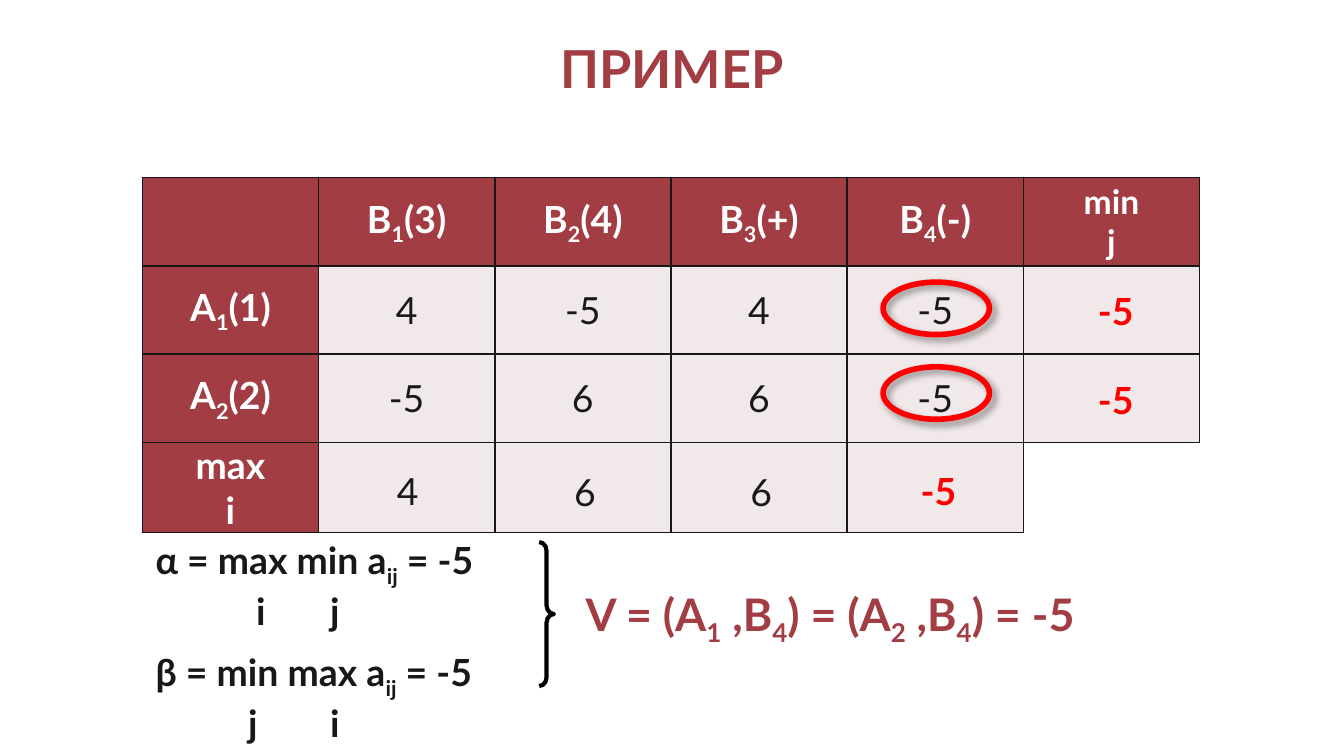
from dataclasses import dataclass

from lxml import etree
from pptx import Presentation, util as u
from pptx.dml.color import RGBColor
from pptx.enum import shapes, text
from pptx.oxml import parse_xml
from pptx.oxml.ns import nsdecls

Cm, Pt = u.Cm, u.Pt
LEFT, CENTER = text.PP_ALIGN.LEFT, text.PP_ALIGN.CENTER


@dataclass(frozen=True)
class Theme:
    font: str = "Lato"
    accent: str = "A23E43"
    ink: str = "181818"
    pale: str = "F0E8E9"
    white: str = "FFFFFF"
    red: str = "FF0000"
    black: str = "000000"
    title: int = 28
    answer: int = 24
    body: int = 20
    small: int = 18


T = Theme()
COL, ROW = 3.33, 1.67
LEFT_EDGE, TOP_EDGE = 2.69, 3.35


def rgb(value):
    return RGBColor.from_string(value)


def add_runs(p, content, size, color, bold):
    """Add runs; parts between bars are subscripts."""
    for i, part in enumerate(content.split("|")):
        if not part:
            continue
        r = p.add_run()
        r.text = part
        f = r.font
        f.name, f.size, f.bold = T.font, Pt(size), bold
        f.color.rgb = rgb(color)
        if i % 2:
            r._r.get_or_add_rPr().set("baseline", "-25000")


def fill_text(tf, lines, size, color, bold, align):
    for i, line in enumerate(lines):
        p = tf.add_paragraph() if i else tf.paragraphs[0]
        p.alignment = align
        add_runs(p, line, size, color, bold)


def add_text(s, x, y, w, h, lines, size=T.body, color=T.ink, bold=False,
             align=LEFT, wrap=True, anchor=text.MSO_ANCHOR.TOP):
    tf = s.shapes.add_textbox(Cm(x), Cm(y), Cm(w), Cm(h)).text_frame
    tf.word_wrap = wrap
    tf.vertical_anchor = anchor
    fill_text(tf, lines, size, color, bold, align)
    return tf


def set_borders(cell):
    tc_pr = cell._tc.get_or_add_tcPr()
    for side in ("lnL", "lnR", "lnT", "lnB"):
        tc_pr.append(parse_xml(
            f'<a:{side} {nsdecls("a")} w="12700"><a:solidFill>'
            f'<a:srgbClr val="{T.ink}"/></a:solidFill></a:{side}>'))


def add_grid(s, col, row, cells, is_header, size=T.body):
    """Place a table whose top left cell is at (col, row) of the matrix."""
    rows, cols = len(cells), len(cells[0])
    table = s.shapes.add_table(
        rows, cols, Cm(LEFT_EDGE + col * COL), Cm(TOP_EDGE + row * ROW),
        Cm(cols * COL), Cm(rows * ROW)).table
    table.first_row = table.horz_banding = False
    for column in table.columns:
        column.width = Cm(COL)
    for i, values in enumerate(cells):
        table.rows[i].height = Cm(ROW)
        for j, value in enumerate(values):
            cell = table.cell(i, j)
            header = is_header(i, j)
            set_borders(cell)
            cell.fill.solid()
            cell.fill.fore_color.rgb = rgb(T.accent if header else T.pale)
            cell.vertical_anchor = text.MSO_ANCHOR.MIDDLE
            cell.margin_left = cell.margin_right = Cm(0.18)
            cell.margin_top = cell.margin_bottom = 0
            if value:
                fill_text(cell.text_frame, value.split("\n"), size,
                          T.white if header else T.ink, header, CENTER)


def add_matrix(s):
    add_grid(s, 0, 0, [
        ["", "B|1|(3)", "B|2|(4)", "B|3|(+)", "B|4|(-)"],
        ["A|1|(1)", "4", "-5", "4", "-5"],
        ["A|2|(2)", "-5", "6", "6", "-5"],
    ], lambda i, j: i == 0 or j == 0)
    add_grid(s, 5, 0, [["min\nj"], [""], [""]], lambda i, j: i == 0, T.small)
    add_grid(s, 0, 3, [["max\ni", "", "", "", ""]], lambda i, j: j == 0)


def add_extremes(s):
    for x, y, value in ((7.11, 8.71, "4"), (10.46, 8.74, "6"), (13.79, 8.74, "6")):
        add_text(s, x, y, 1.19, 1.12, [value], align=CENTER)
    for x, y in ((20.5, 5.31), (20.5, 6.99), (17.15, 8.71)):
        add_text(s, x, y, 1.19, 1.12, ["-5"], color=T.red, bold=True)


def add_price(s, y, formula, indices, stops):
    """Add a game price with its indices tabbed under max and min."""
    tf = add_text(s, LEFT_EDGE, y, 7.39, 1.96,
                  [formula, "".join("\t" + i for i in indices)], bold=True)
    p_pr = tf.paragraphs[1]._p.get_or_add_pPr()
    tabs = "".join(f'<a:tab pos="{Cm(stop)}" algn="l"/>' for stop in stops)
    p_pr.append(parse_xml(f'<a:tabLst {nsdecls("a")}>{tabs}</a:tabLst>'))


def add_outline(s, kind, x, y, w, h, color, width):
    sp = s.shapes.add_shape(kind, Cm(x), Cm(y), Cm(w), Cm(h))
    sp.shadow.inherit = False
    sp.fill.background()
    sp.line.color.rgb = rgb(color)
    sp.line.width = Pt(width)
    return sp


def add_saddle_ring(s, y):
    sp = add_outline(s, shapes.MSO_SHAPE.OVAL, 16.69, y, 2.01, 0.99, T.red, 3)
    effects = sp._element.spPr.find("{*}effectLst")
    shadow = parse_xml(
        f'<a:outerShdw {nsdecls("a")} blurRad="{Pt(4)}" dist="{Pt(3)}" '
        f'dir="2700000" algn="tl" rotWithShape="0"/>')
    color = etree.SubElement(shadow, shadow.tag.replace("outerShdw", "srgbClr"),
                             val=T.black)
    etree.SubElement(color, shadow.tag.replace("outerShdw", "alpha"), val="40000")
    effects.append(shadow)


def main():
    prs = Presentation()
    prs.slide_width, prs.slide_height = Cm(25.4), Cm(14.28)
    s = prs.slides.add_slide(prs.slide_layouts[6])

    add_text(s, 1.27, 0.38, 22.86, 1.78, ["ПРИМЕР"], T.title, T.accent, True,
             CENTER, anchor=text.MSO_ANCHOR.MIDDLE)
    add_matrix(s)
    add_extremes(s)
    add_price(s, 10.03, "α = max min a|ij| = -5", "ij", (1.9, 3.3))
    add_price(s, 12.14, "β = min max a|ij| = -5", "ji", (1.75, 3.3))
    brace = add_outline(s, shapes.MSO_SHAPE.RIGHT_BRACE, 10.19, 10.24, 0.28, 2.72,
                        T.black, 2.25)
    brace.adjustments[0] = 0.58
    add_text(s, 10.82, 10.95, 10.9, 1.27,
             ["V = (A|1| ,B|4|) = (A|2| ,B|4|) = -5"],
             T.answer, T.accent, True, wrap=False)
    for y in (5.33, 6.93):
        add_saddle_ring(s, y)

    prs.save("out.pptx")


if __name__ == "__main__":
    main()
